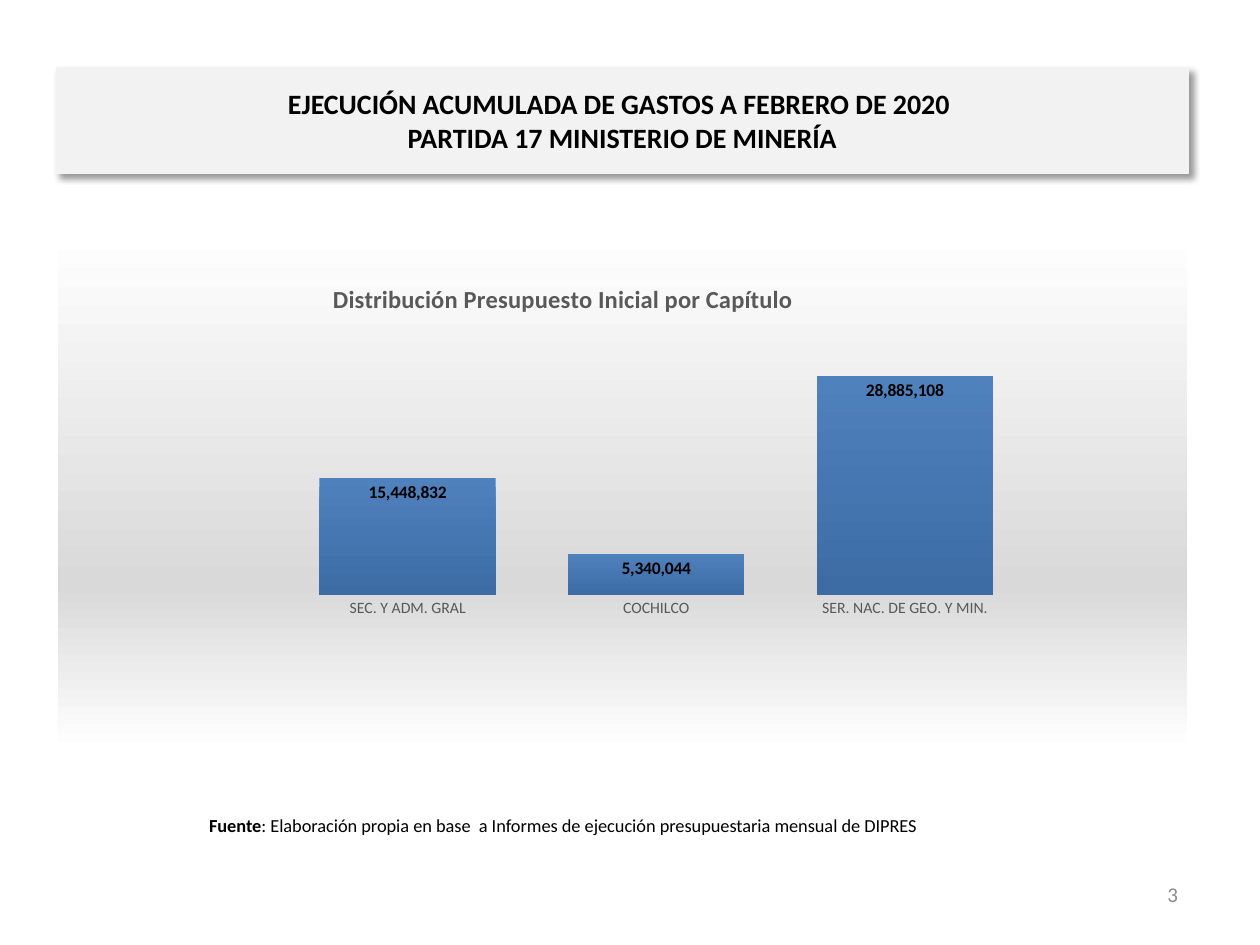
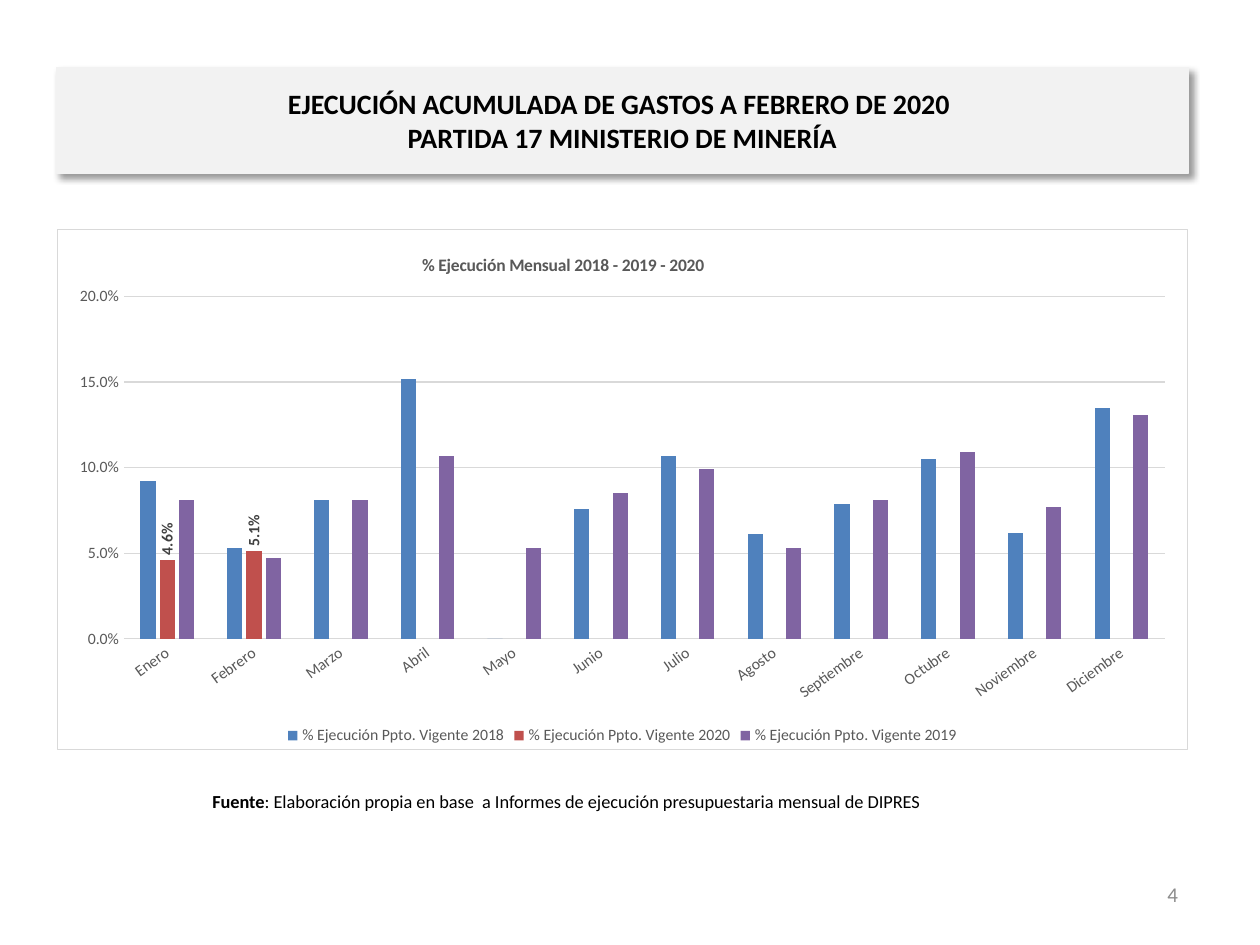
from lxml.etree import SubElement as Sub
from pptx import Presentation
from pptx.chart.data import CategoryChartData as Data
from pptx.dml.color import RGBColor as Rgb
from pptx.enum.chart import XL_CHART_TYPE as Kind
from pptx.enum.chart import XL_LABEL_POSITION as Spot
from pptx.enum.chart import XL_LEGEND_POSITION as Side
from pptx.enum.chart import XL_TICK_MARK as Tick
from pptx.enum.shapes import MSO_SHAPE as Form
from pptx.enum.text import MSO_ANCHOR as Anchor
from pptx.enum.text import PP_ALIGN as Align
from pptx.oxml import parse_xml
from pptx.oxml.ns import nsdecls, qn
from pptx.util import Cm, Pt

INK = {
    "black": "000000", "white": "FFFFFF", "band": "F2F2F2", "page": "8C8C8C",
    "gray": "595959", "label": "404040", "rule": "D9D9D9", "blue": "4F81BD",
    "deep": "3D6CA4", "red": "C0504D", "plum": "8064A2",
}
HEAD = "EJECUCIÓN ACUMULADA DE GASTOS A FEBRERO DE 2020 \vPARTIDA 17 MINISTERIO DE MINERÍA"
NOTE = ": Elaboración propia en base  a Informes de ejecución presupuestaria mensual de DIPRES"
PARTS = {
    "SEC. Y ADM. GRAL": 15448832,
    "COCHILCO": 5340044,
    "SER. NAC. DE GEO. Y MIN.": 28885108,
}
MONTHS = ["Enero", "Febrero", "Marzo", "Abril", "Mayo", "Junio", "Julio",
          "Agosto", "Septiembre", "Octubre", "Noviembre", "Diciembre"]
YEARS = {
    "2018": [0.092, 0.053, 0.081, 0.152, 0, 0.076, 0.107, 0.061, 0.079, 0.105, 0.062, 0.135],
    "2020": [0.046, 0.051] + [None] * 10,
    "2019": [0.081, 0.047, 0.081, 0.107, 0.053, 0.085, 0.099, 0.053, 0.081, 0.109, 0.077, 0.131],
}


def fade(*stops):
    marks = "".join(
        f'<a:gs pos="{at * 1000}"><a:srgbClr val="{INK[name]}"/></a:gs>' for at, name in stops)
    return parse_xml(f'<a:gradFill {nsdecls("a")} rotWithShape="1"><a:gsLst>{marks}</a:gsLst>'
                     '<a:lin ang="5400000" scaled="0"/></a:gradFill>')


def place(node, index, **spots):
    old = node.find(qn("c:layout"))
    if old is not None:
        node.remove(old)
    new = parse_xml(f'<c:layout {nsdecls("c")}><c:manualLayout/></c:layout>')
    for key, value in spots.items():
        Sub(new[0], qn(f"c:{key}")).set("val", str(value))
    node.insert(index, new)


def turn(node, angle):
    body = node.find(qn("c:txPr")).find(qn("a:bodyPr"))
    body.set("rot", str(angle * 60000))
    body.set("vert", "horz")


class Deck:
    face = "Calibri"
    left, wide = Cm(1.14), Cm(22.81)
    first = 3

    def __init__(self):
        self.show = Presentation()
        self.show.slide_width, self.show.slide_height = Cm(25.4), Cm(19.05)

    def style(self, font, size, color="black", bold=False):
        font.name, font.size, font.bold = self.face, Pt(size), bold
        font.color.rgb = Rgb.from_string(INK[color])

    def paint(self, fill, color):
        fill.solid()
        fill.fore_color.rgb = Rgb.from_string(INK[color])

    def stroke(self, line, color):
        self.paint(line.fill, color)
        line.width = Pt(0.75)

    def start(self):
        page = self.first + len(self.show.slides)
        self.slide = self.show.slides.add_slide(self.show.slide_layouts[6])
        self.band()
        self.text(str(page), Cm(18.08), Cm(17.52), Cm(5.92), 12, "page", Align.RIGHT)

    def band(self):
        band = self.slide.shapes.add_shape(
            Form.RECTANGLE, self.left, Cm(1.36), self.wide, Cm(2.14))
        self.paint(band.fill, "band")
        self.stroke(band.line, "band")
        band.shadow.inherit = False
        glow = Sub(band._element.spPr.find(qn("a:effectLst")), qn("a:outerShdw"),
                   blurRad=str(Pt(4)), dist=str(Pt(3)), dir="2700000",
                   algn="tl", rotWithShape="0")
        tone = Sub(glow, qn("a:srgbClr"), val=INK["black"])
        Sub(tone, qn("a:alpha"), val="40000")
        frame = band.text_frame
        frame.word_wrap, frame.vertical_anchor = True, Anchor.MIDDLE
        para = frame.paragraphs[0]
        para.text, para.alignment = HEAD, Align.CENTER
        self.style(para.font, 16, bold=True)

    def text(self, words, left, top, wide, size, color, align):
        frame = self.slide.shapes.add_textbox(left, top, wide, Cm(1.02)).text_frame
        frame.word_wrap, frame.vertical_anchor = True, Anchor.MIDDLE
        para = frame.paragraphs[0]
        para.text, para.alignment = words, align
        self.style(para.font, size, color)
        return para

    def source(self, left, top, wide):
        para = self.text("Fuente", left, top, wide, 10.5, "black", Align.CENTER)
        para.runs[0].font.bold = True
        para.add_run().text = NOTE

    def chart(self, top, high, cats, rows, form, title, size, spot):
        data = Data(number_format=form)
        data.categories = cats
        for name, row in rows.items():
            data.add_series(name, row)
        chart = self.slide.shapes.add_chart(
            Kind.COLUMN_CLUSTERED, self.left, top, self.wide, high, data).chart
        self.style(chart.font, 10)
        chart.has_legend = False
        chart.has_title = True
        para = chart.chart_title.text_frame.paragraphs[0]
        para.text = title
        self.style(para.font, size, "gray", True)
        place(chart.chart_title._element, 1, xMode="edge", yMode="edge", x=spot[0], y=spot[1])
        chart.plots[0].vary_by_categories = False
        for axis in (chart.category_axis, chart.value_axis):
            axis.major_tick_mark = axis.minor_tick_mark = Tick.NONE
            axis.has_major_gridlines = False
            axis.format.line.fill.background()
            self.style(axis.tick_labels.font, 9, "gray")
        chart.value_axis.minimum_scale = 0
        chart.value_axis.tick_labels.number_format = form
        chart.value_axis.tick_labels.number_format_is_linked = False
        return chart

    def back(self, chart, fill, edge):
        area = parse_xml(f'<c:spPr {nsdecls("c", "a")}><a:ln w="{Pt(0.75)}"><a:solidFill>'
                         f'<a:srgbClr val="{INK[edge]}"/></a:solidFill></a:ln></c:spPr>')
        area.insert(0, fill)
        chart._chartSpace.find(qn("c:chart")).addnext(area)

    def labels(self, bars, form, spot, size, color):
        marks = bars.data_labels
        marks.show_value, marks.position = True, spot
        marks.number_format, marks.number_format_is_linked = form, False
        self.style(marks.font, size, color, True)
        return marks

    def budget(self):
        self.start()
        form = "#,##0"
        chart = self.chart(Cm(4.65), Cm(10.49), list(PARTS), {"Presupuesto": PARTS.values()},
                           form, "Distribución Presupuesto Inicial por Capítulo", 14, (0.24, 0.09))
        self.back(chart, fade((0, "white"), (68, "rule"), (100, "white")), "white")
        place(chart._chartSpace.chart.plotArea, 0, layoutTarget="inner", xMode="edge",
              yMode="edge", x=0.2, y=0.19, w=0.66, h=0.51)
        chart.value_axis.visible = False
        chart.value_axis.maximum_scale = 35000000
        plot = chart.plots[0]
        plot.gap_width = 41
        bars = plot.series[0]
        bars._element.get_or_add_spPr().insert(0, fade((0, "blue"), (100, "deep")))
        self.labels(bars, form, Spot.INSIDE_END, 10, "black")
        self.source(Cm(1.65), Cm(16.13), Cm(19.41))

    def monthly(self):
        self.start()
        form = "0.0%"
        rows = {f"% Ejecución Ppto. Vigente {year}": row for year, row in YEARS.items()}
        chart = self.chart(Cm(4.62), Cm(10.51), MONTHS, rows, form,
                           "% Ejecución Mensual 2018 - 2019 - 2020", 10, (0.32, 0.04))
        self.back(chart, parse_xml(f'<a:solidFill {nsdecls("a")}><a:srgbClr '
                                   f'val="{INK["white"]}"/></a:solidFill>'), "rule")
        self.stroke(chart.category_axis.format.line, "rule")
        turn(chart.category_axis._element, -36)
        axis = chart.value_axis
        axis.maximum_scale, axis.major_unit = 0.2, 0.05
        axis.has_major_gridlines = True
        self.stroke(axis.major_gridlines.format.line, "rule")
        chart.has_legend = True
        chart.legend.position = Side.BOTTOM
        chart.legend.include_in_layout = False
        self.style(chart.legend.font, 9, "gray")
        plot = chart.plots[0]
        plot.gap_width, plot.overlap = 219, -27
        for bars, color in zip(plot.series, ("blue", "red", "plum")):
            self.paint(bars.format.fill, color)
        marks = self.labels(plot.series[1], form, Spot.OUTSIDE_END, 9, "label")
        turn(marks._element, -90)
        self.source(Cm(1.22), Cm(15.65), Cm(20.4))


def main():
    deck = Deck()
    deck.budget()
    deck.monthly()
    deck.show.save("out.pptx")


if __name__ == "__main__":
    main()
